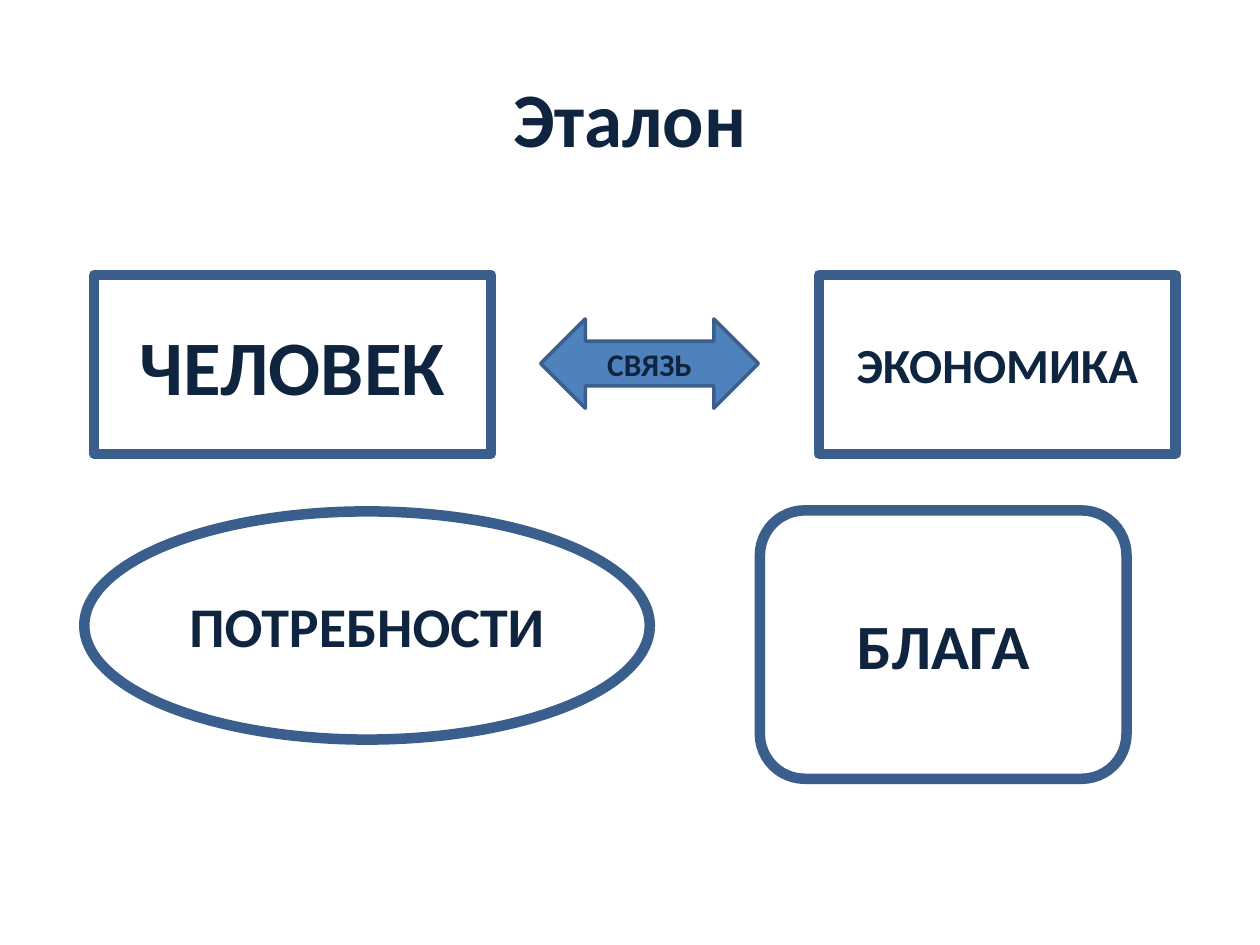
from dataclasses import dataclass
from typing import Optional

from pptx import Presentation
from pptx import util as u
from pptx.dml.color import RGBColor
from pptx.enum import shapes, text

COLORS = {"ink": "0F243E", "outline": "3A5F8C", "arrow": "4F81BD"}
FONT = "Calibri"
KIND = shapes.MSO_SHAPE


@dataclass
class Concept:
    """A labelled figure; lengths in centimetres, sizes in points."""
    label: str
    kind: int
    left: float
    top: float
    width: float
    height: float
    size: int
    line: float = 6
    fill: Optional[str] = None


ROW_TOP, ROW_HEIGHT = 5.54, 3.61

CONCEPTS = [
    Concept("ЧЕЛОВЕК", KIND.RECTANGLE, 1.9, ROW_TOP, 8, ROW_HEIGHT, 44),
    Concept("ЭКОНОМИКА", KIND.RECTANGLE, 16.51, ROW_TOP, 7.19, ROW_HEIGHT, 28),
    Concept("ПОТРЕБНОСТИ", KIND.OVAL, 1.7, 10.31, 11.4, 4.6, 32),
    Concept("СВЯЗЬ", KIND.LEFT_RIGHT_ARROW, 10.9, 6.43, 4.39, 1.8, 18,
            line=2, fill="arrow"),
    Concept("БЛАГА", KIND.ROUNDED_RECTANGLE, 15.32, 10.29, 7.39, 5.41, 36),
]


def color(name: str) -> RGBColor:
    return RGBColor.from_string(COLORS[name])


def write(box, words: str, *, size: int, bold: bool = True, ink: str = "ink") -> None:
    """Put one centred line of text into a shape or placeholder."""
    frame = box.text_frame
    frame.word_wrap = True
    frame.vertical_anchor = text.MSO_ANCHOR.MIDDLE
    para = frame.paragraphs[0]
    para.alignment = text.PP_ALIGN.CENTER
    span = para.add_run()
    span.text = words
    span.font.name = FONT
    span.font.size = u.Pt(size)
    span.font.bold = bold
    span.font.color.rgb = color(ink)


def draw_concept(page, concept: Concept) -> None:
    box = page.shapes.add_shape(
        concept.kind, u.Cm(concept.left), u.Cm(concept.top),
        u.Cm(concept.width), u.Cm(concept.height))
    box.shadow.inherit = False
    if concept.fill:
        box.fill.solid()
        box.fill.fore_color.rgb = color(concept.fill)
    else:
        box.fill.background()
    box.line.color.rgb = color("outline")
    box.line.width = u.Pt(concept.line)
    write(box, concept.label, size=concept.size)


def main() -> None:
    deck = Presentation()
    deck.slide_width, deck.slide_height = u.Cm(25.4), u.Cm(19.05)
    page = deck.slides.add_slide(deck.slide_layouts[5])

    # Title
    title = page.shapes.title
    title.left, title.top = u.Cm(1.27), u.Cm(0.76)
    title.width, title.height = u.Cm(22.86), u.Cm(3.18)
    write(title, "Эталон", size=44)

    # Concepts and the link between them
    for concept in CONCEPTS:
        draw_concept(page, concept)

    deck.save("out.pptx")


if __name__ == "__main__":
    main()
